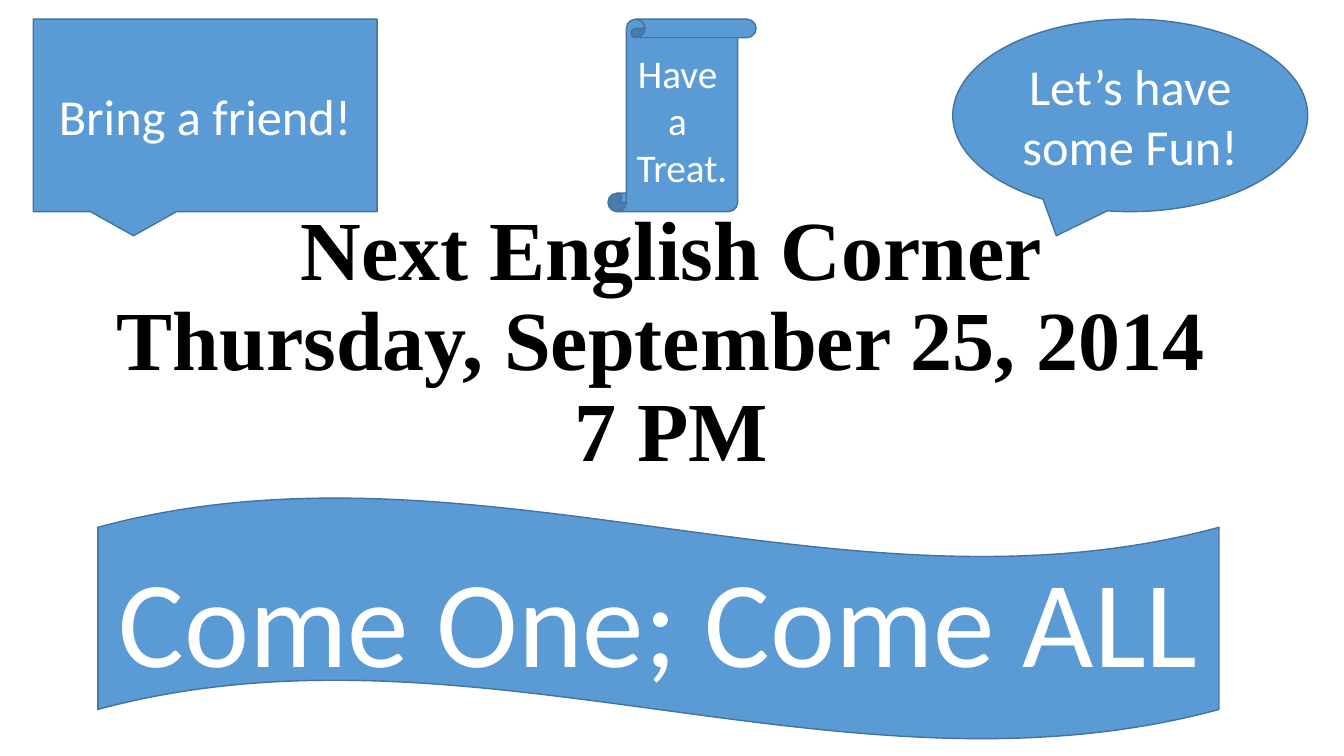
from pptx import Presentation
from pptx.dml.color import RGBColor
from pptx.enum import shapes, text
from pptx.util import Inches, Pt

BLUE = RGBColor(0x5B, 0x9B, 0xD5)
DARK_BLUE = RGBColor(0x43, 0x73, 0x9E)
WHITE = RGBColor(0xFF, 0xFF, 0xFF)
BLACK = RGBColor(0x00, 0x00, 0x00)


def format_text(frame, font_name, size, color, bold=False):
    frame.vertical_anchor = text.MSO_ANCHOR.MIDDLE
    frame.word_wrap = True
    for paragraph in frame.paragraphs:
        paragraph.alignment = text.PP_ALIGN.CENTER
        for run in paragraph.runs:
            run.font.name = font_name
            run.font.size = Pt(size)
            run.font.color.rgb = color
            run.font.bold = bold


presentation = Presentation()
presentation.slide_width = Inches(13.33)
presentation.slide_height = Inches(7.5)
slide = presentation.slides.add_slide(presentation.slide_layouts[5])

title = slide.shapes.title
title.left, title.top = Inches(0.91), Inches(3.11)
title.width, title.height = Inches(11.5), Inches(1.45)
title_frame = title.text_frame
title_frame.text = "Next English Corner\vThursday, September 25, 2014 \v7 PM"
title_frame.auto_size = text.MSO_AUTO_SIZE.NONE
# The bottom inset lifts the lines clear of the wave
title_frame.margin_bottom = Inches(0.9)
title_frame.paragraphs[0].line_spacing = 0.9
format_text(title_frame, "Times New Roman", 60, BLACK, bold=True)

TOP_ROW, TOP_HEIGHT = 0.19, 1.91
SHAPE = shapes.MSO_SHAPE
banners = [
    (SHAPE.OVAL_CALLOUT, 9.45, TOP_ROW, 3.52, TOP_HEIGHT, 36, "Let’s have some Fun!"),
    (SHAPE.RECTANGULAR_CALLOUT, 0.33, TOP_ROW, 3.41, TOP_HEIGHT, 36, "Bring a friend!"),
    (SHAPE.WAVE, 0.97, 4.93, 11.12, 2.41, 88, "Come One; Come ALL"),
    (SHAPE.VERTICAL_SCROLL, 6.03, TOP_ROW, 1.47, TOP_HEIGHT, 28, "Have \na \nTreat."),
]
for kind, left, top, width, height, size, words in banners:
    banner = slide.shapes.add_shape(
        kind, Inches(left), Inches(top), Inches(width), Inches(height))
    banner.shadow.inherit = False
    banner.fill.solid()
    banner.fill.fore_color.rgb = BLUE
    banner.line.color.rgb = DARK_BLUE
    banner.line.width = Pt(1)
    banner.text_frame.text = words
    format_text(banner.text_frame, "Calibri", size, WHITE)

presentation.save("out.pptx")
